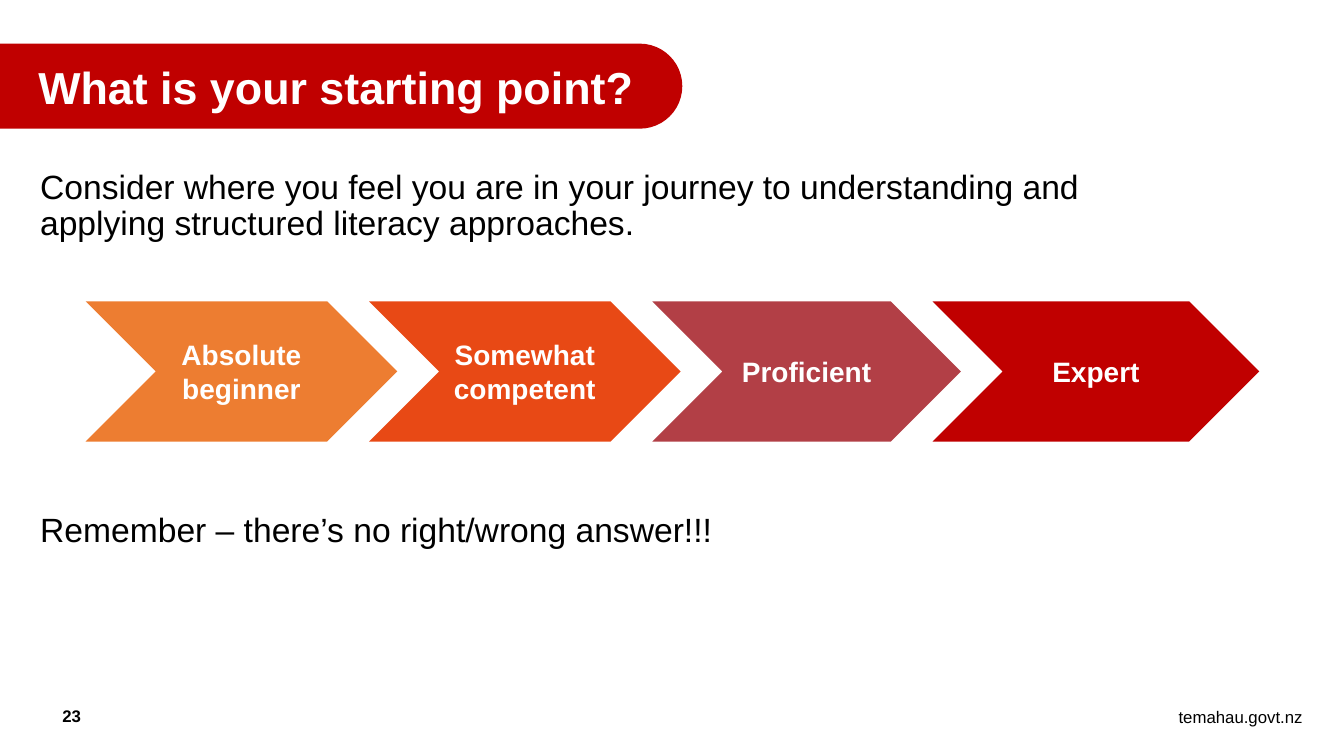
from pptx import Presentation
from pptx.dml.color import RGBColor
from pptx.enum.shapes import MSO_SHAPE as Shape
from pptx.enum.text import MSO_ANCHOR as Anchor, PP_ALIGN as Align
from pptx.util import Inches, Pt

# Content
TITLE = "What is your starting point?"
STAGES = [  # label, width, fill
    ("Absolute beginner", 3.09, "ED7D31"),
    ("Somewhat competent", 3.09, "E84915"),
    ("Proficient", 3.06, "B23F46"),
    ("Expert", 3.24, "C00000"),
]
TEXTS = [  # text, (left, top, width, height), size, bold, align, anchor, line spacing
    ("Consider where you feel you are in your journey to understanding "
     "and applying structured literacy approaches.",
     (0.3, 1.64, 10.5, 1.39), 24, False, Align.LEFT, Anchor.TOP, 0.9),
    ("Remember – there’s no right/wrong answer!!!",
     (0.3, 5, 9.11, 0.5), 24, False, Align.LEFT, Anchor.TOP, 1),
    ("23", (0.52, 7, 1.15, 0.2), 12, True, Align.LEFT, Anchor.MIDDLE, 1),
    ("temahau.govt.nz", (9.99, 6.96, 3.03, 0.3), 12, False, Align.RIGHT, Anchor.TOP, 1),
]

# Layout
STAGE_LEFT, STAGE_TOP, STAGE_HEIGHT, STAGE_OVERLAP = 0.85, 2.99, 1.39, 0.28
TITLE_BAR = (-0.43, 0.44, 7.19, 0.83)
TITLE_INDENT = 0.59
RED, WHITE, BLACK = "C00000", "FFFFFF", "000000"


def color(hex_code):
    return RGBColor.from_string(hex_code)


def write(shape, text, size, ink, bold, align, anchor, spacing=1):
    frame = shape.text_frame
    frame.word_wrap = True
    frame.vertical_anchor = anchor
    para = frame.paragraphs[0]
    para.text = text
    para.alignment = align
    para.line_spacing = spacing
    para.font.name = "Arial"
    para.font.size = Pt(size)
    para.font.bold = bold
    para.font.color.rgb = color(ink)
    return para


def add_filled(page, kind, place, fill):
    shape = page.shapes.add_shape(kind, *map(Inches, place))
    shape.shadow.inherit = False
    shape.fill.solid()
    shape.fill.fore_color.rgb = color(fill)
    shape.line.fill.background()
    return shape


def main():
    deck = Presentation()
    deck.slide_width, deck.slide_height = Inches(13.33), Inches(7.5)
    page = deck.slides.add_slide(deck.slide_layouts[6])

    # Plain texts
    for text, place, size, bold, align, anchor, spacing in TEXTS:
        box = page.shapes.add_textbox(*map(Inches, place))
        write(box, text, size, BLACK, bold, align, anchor, spacing)

    # Chain of stages
    left = STAGE_LEFT
    for label, width, fill in STAGES:
        place = (left, STAGE_TOP, width, STAGE_HEIGHT)
        stage = add_filled(page, Shape.CHEVRON, place, fill)
        write(stage, label, 20, WHITE, True, Align.CENTER, Anchor.MIDDLE)
        left += width - STAGE_OVERLAP

    # Title bar
    bar = add_filled(page, Shape.ROUNDED_RECTANGLE, TITLE_BAR, RED)
    bar.adjustments[0] = 0.5
    bar.line.color.rgb = color(RED)
    bar.line.width = Pt(1)
    title = write(bar, TITLE, 32, WHITE, True, Align.LEFT, Anchor.MIDDLE)
    title._p.get_or_add_pPr().set("marL", str(Inches(TITLE_INDENT)))

    deck.save("out.pptx")


if __name__ == "__main__":
    main()
